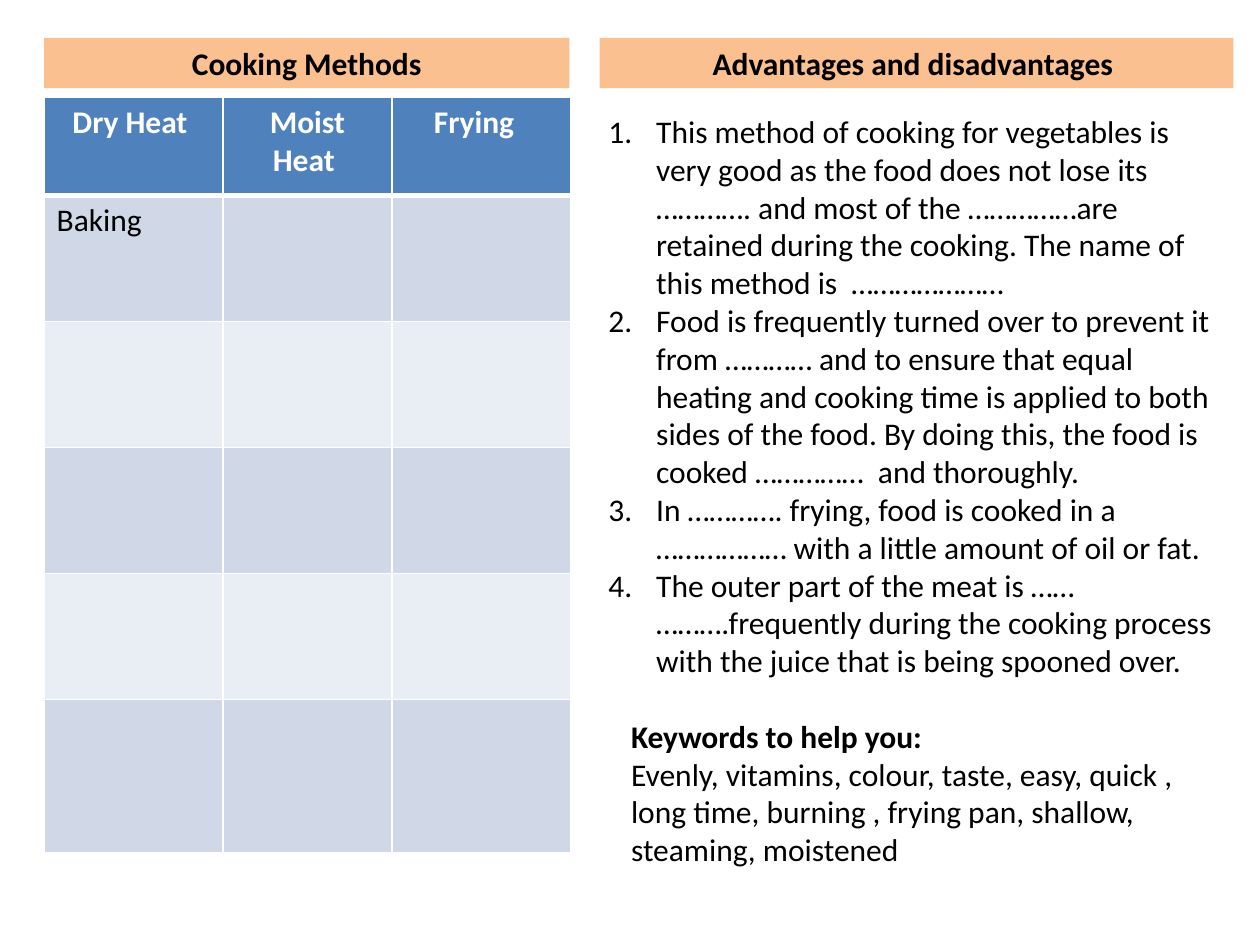
from lxml import etree
from pptx import Presentation
from pptx import util as u
from pptx.dml.color import RGBColor
from pptx.enum import shapes, text
from pptx.oxml.ns import qn

COLORS = {
    "banner": "FAC090",
    "header": "4F81BD",
    "odd_row": "D0D8E8",
    "even_row": "E9EDF4",
    "white": "FFFFFF",
    "black": "000000",
}
COLUMN_WIDTHS = [1.42, 1.34, 1.42]
ROW_HEIGHTS = [0.78, 1, 1, 1, 1, 1.22]
METHODS = [["Dry Heat ", "Moist Heat ", "Frying  "], ["Baking"]]
QUESTIONS = [
    "This method of cooking for vegetables is very good as the food does not lose its "
    "…………. and most of the ……………are retained during the cooking. "
    "The name of this method is  …………………",
    "Food is frequently turned over to prevent it from ………… and to ensure that equal "
    "heating and cooking time is applied to both sides of the food. "
    "By doing this, the food is cooked ……………  and thoroughly.",
    "In …………. frying, food is cooked in a ……………… with a little amount of oil or fat.",
    "The outer part of the meat is …… ……….frequently during the cooking process "
    "with the juice that is being spooned over.",
]
KEYWORDS = [
    "Keywords to help you:",
    "Evenly, vitamins, colour, taste, easy, quick , long time, burning , "
    "frying pan, shallow, steaming, moistened",
]


class Worksheet:
    """Holds the style and the current slide, and draws each kind of element."""

    def __init__(self, slide, font="Calibri", size=18):
        self.slide = slide
        self.font = font
        self.size = u.Pt(size)

    def color(self, name):
        return RGBColor.from_string(COLORS[name])

    def fill(self, target, name):
        target.fill.solid()
        target.fill.fore_color.rgb = self.color(name)

    def style(self, paragraph, color="black", bold=False, centered=False):
        paragraph.font.name = self.font
        paragraph.font.size = self.size
        paragraph.font.bold = bold
        paragraph.font.color.rgb = self.color(color)
        paragraph.alignment = text.PP_ALIGN.CENTER if centered else text.PP_ALIGN.LEFT

    def banner(self, title, left, width):
        shape = self.slide.shapes.add_shape(
            shapes.MSO_SHAPE.RECTANGLE,
            u.Inches(left), u.Inches(0.3), u.Inches(width), u.Inches(0.4))
        shape.shadow.inherit = False
        shape.line.fill.background()
        self.fill(shape, "banner")
        frame = shape.text_frame
        frame.word_wrap = True
        frame.vertical_anchor = text.MSO_ANCHOR.TOP
        frame.text = title
        self.style(frame.paragraphs[0], bold=True, centered=True)

    def text_box(self, lines, left, top, width, height, bold_first=False, numbered=False):
        box = self.slide.shapes.add_textbox(*map(u.Inches, (left, top, width, height)))
        frame = box.text_frame
        frame.word_wrap = True
        frame.text = "\n".join(lines)
        for index, paragraph in enumerate(frame.paragraphs):
            self.style(paragraph, bold=bold_first and index == 0)
            if numbered:
                self.number(paragraph)

    def number(self, paragraph):
        properties = paragraph._p.get_or_add_pPr()
        indent = u.Inches(0.38)
        properties.set("marL", str(indent))
        properties.set("indent", str(-indent))
        bullet = etree.Element(qn("a:buAutoNum"), type="arabicPeriod")
        properties.insert(0, bullet)

    def borders(self, cell, bottom):
        properties = cell._tc.get_or_add_tcPr()
        for side, points in (("L", 1), ("R", 1), ("T", 1), ("B", bottom)):
            line = etree.SubElement(properties, qn(f"a:ln{side}"), w=str(u.Pt(points)))
            solid = etree.SubElement(line, qn("a:solidFill"))
            etree.SubElement(solid, qn("a:srgbClr"), val=COLORS["white"])

    def table(self, entries, left, top, widths, heights):
        table = self.slide.shapes.add_table(
            len(heights), len(widths), u.Inches(left), u.Inches(top),
            u.Inches(sum(widths)), u.Inches(sum(heights))).table
        for column, width in zip(table.columns, widths):
            column.width = u.Inches(width)
        for index, (row, height) in enumerate(zip(table.rows, heights)):
            row.height = u.Inches(height)
            header = index == 0
            band = "header" if header else "odd_row" if index % 2 else "even_row"
            for cell in row.cells:
                self.borders(cell, bottom=3 if header else 1)
                self.fill(cell, band)
        for row, labels in zip(table.rows, entries):
            header = labels is entries[0]
            for cell, label in zip(row.cells, labels):
                cell.text = label
                self.style(cell.text_frame.paragraphs[0],
                           "white" if header else "black", header, header)


def main():
    presentation = Presentation()
    presentation.slide_width = u.Inches(10)
    presentation.slide_height = u.Inches(7.5)
    sheet = Worksheet(presentation.slides.add_slide(presentation.slide_layouts[6]))
    sheet.table(METHODS, 0.35, 0.77, COLUMN_WIDTHS, ROW_HEIGHTS)
    sheet.banner("Cooking Methods", 0.35, 4.17)
    sheet.banner("Advantages and disadvantages ", 4.76, 5.03)
    sheet.text_box(KEYWORDS, 4.91, 5.64, 4.88, 1.31, bold_first=True)
    sheet.text_box(QUESTIONS, 4.73, 0.84, 5.04, 5.25, numbered=True)
    presentation.save("out.pptx")


if __name__ == "__main__":
    main()
